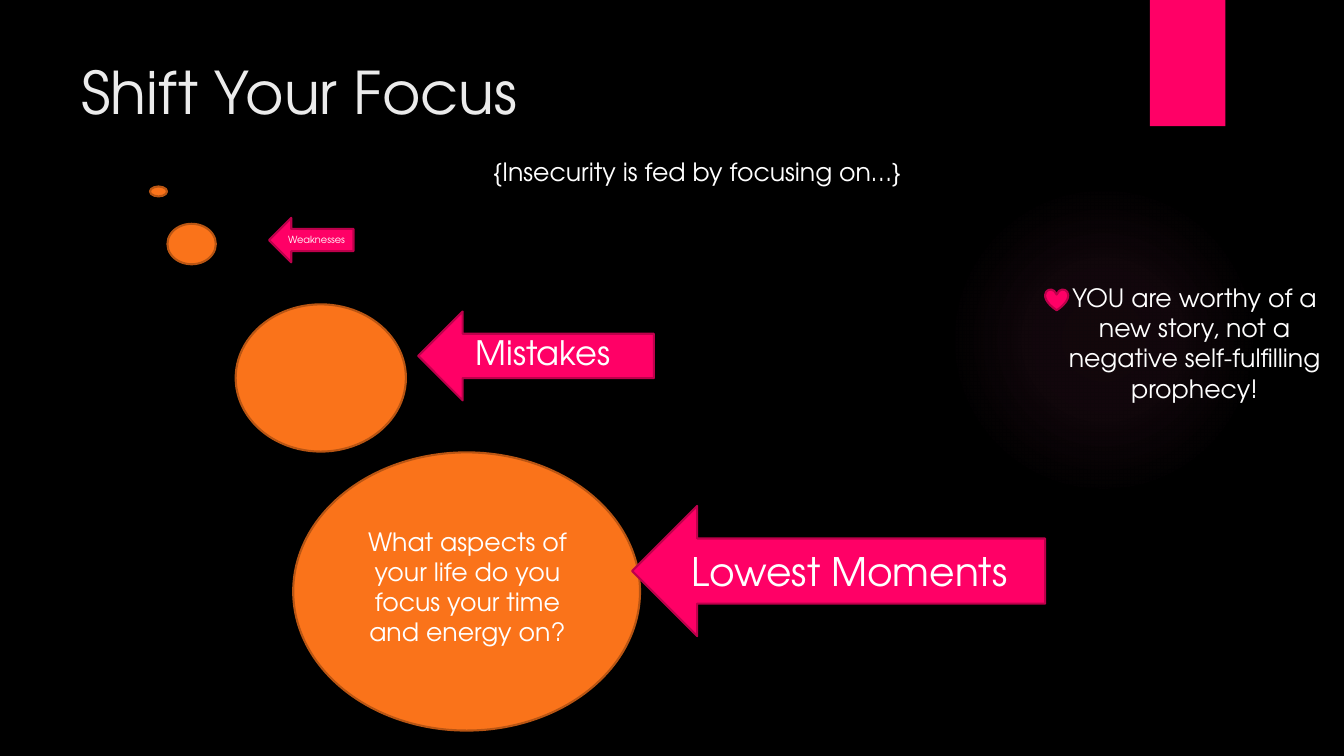
import lxml.etree
import pptx
import pptx.dml.color
import pptx.enum.shapes
import pptx.enum.text
import pptx.oxml.ns
import pptx.util

Cm = pptx.util.Cm
SHAPE = pptx.enum.shapes.MSO_SHAPE
ALIGN = pptx.enum.text.PP_ALIGN
ANCHOR = pptx.enum.text.MSO_ANCHOR
qn = pptx.oxml.ns.qn


def color(value):
    return pptx.dml.color.RGBColor.from_string(value)


class FocusSlide:
    """Draws the elements of the focus slide in one shared style."""

    font_name = "TeX Gyre Adventor"
    pink, pink_edge = "FF0066", "BD004B"
    orange, orange_edge = "FA731A", "B95513"
    white, title_color = "FFFFFF", "EBEBEB"

    def __init__(self, presentation):
        self.slide = presentation.slides.add_slide(presentation.slide_layouts[6])
        self.slide.background.fill.solid()
        self.slide.background.fill.fore_color.rgb = color("000000")

    def shape(self, kind, box, fill, edge=None):
        shape = self.slide.shapes.add_shape(kind, *map(Cm, box))
        shape.shadow.inherit = False
        shape.fill.solid()
        shape.fill.fore_color.rgb = color(fill)
        if edge:
            shape.line.color.rgb = color(edge)
            shape.line.width = pptx.util.Pt(1.5)
        else:
            shape.line.fill.background()
        return shape

    def circle(self, *box):
        return self.shape(SHAPE.OVAL, box, self.orange, self.orange_edge)

    def arrow(self, *box):
        return self.shape(SHAPE.LEFT_ARROW, box, self.pink, self.pink_edge)

    def glow(self, *box):
        shape = self.shape(SHAPE.OVAL, box, self.pink)
        solid = shape.element.spPr.find(qn("a:solidFill"))
        gradient = lxml.etree.Element(qn("a:gradFill"), rotWithShape="1")
        stops = lxml.etree.SubElement(gradient, qn("a:gsLst"))
        for position, opacity in ((0, 7), (36, 6), (69, 0)):
            stop = lxml.etree.SubElement(stops, qn("a:gs"), pos=str(position * 1000))
            tint = lxml.etree.SubElement(stop, qn("a:srgbClr"), val="FF66A3")
            lxml.etree.SubElement(tint, qn("a:alpha"), val=str(opacity * 1000))
        circle = lxml.etree.SubElement(gradient, qn("a:path"), path="circle")
        sides = dict.fromkeys("ltrb", "50000")
        lxml.etree.SubElement(circle, qn("a:fillToRect"), **sides)
        solid.getparent().replace(solid, gradient)

    def add_words(self, frame, words, size, align, ink):
        frame.word_wrap = True
        paragraph = frame.paragraphs[0]
        paragraph.alignment = align
        run = paragraph.add_run()
        run.text = words
        run.font.name = self.font_name
        run.font.size = pptx.util.Pt(size)
        run.font.color.rgb = color(ink)

    def label(self, words, size, box, align=ALIGN.CENTER, ink=white):
        frame = self.slide.shapes.add_textbox(*map(Cm, box)).text_frame
        frame.vertical_anchor = ANCHOR.TOP
        self.add_words(frame, words, size, align, ink)


def main():
    presentation = pptx.Presentation()
    presentation.slide_width = Cm(33.87)
    presentation.slide_height = Cm(19.05)
    focus = FocusSlide(presentation)

    focus.glow(23.9, 4.65, 7.82, 7.82)
    focus.shape(SHAPE.RECTANGLE, (28.98, 0, 1.9, 3.18), focus.pink)
    focus.label("Shift Your Focus", 42, (1.8, 1.27, 26.14, 3.89),
                ALIGN.LEFT, focus.title_color)

    focus.circle(4.22, 5.64, 1.22, 1.02)
    focus.circle(5.94, 7.67, 4.29, 3.71)
    focus.circle(7.39, 11.4, 8.74, 7.01)
    focus.arrow(10.54, 7.85, 5.94, 2.24)
    lowest = focus.arrow(15.93, 12.75, 10.41, 3.28)
    lowest.text_frame.vertical_anchor = ANCHOR.MIDDLE
    focus.add_words(lowest.text_frame, "Lowest Moments ", 28, ALIGN.CENTER, focus.white)
    focus.label("Mistakes", 24, (11.63, 8.23, 4.11, 1.27))
    focus.circle(3.78, 4.7, 0.43, 0.25)
    focus.arrow(6.78, 5.49, 2.13, 1.12)
    focus.label("Weaknesses", 7, (7.01, 5.77, 5.46, 0.56), ALIGN.LEFT)

    focus.label("{Insecurity is fed by focusing on…}", 18, (11.51, 3.81, 12.12, 2.57))
    focus.label("What aspects of your life do you focus your time and energy on?",
                18, (8.86, 13.13, 5.84, 3.33))
    focus.label("YOU are worthy of a new story, not a negative self-fulfilling prophecy!",
                18, (26.64, 6.99, 6.93, 3.33))
    focus.shape(SHAPE.HEART, (26.34, 7.29, 0.58, 0.53), focus.pink, focus.pink_edge)

    presentation.save("out.pptx")


if __name__ == "__main__":
    main()
